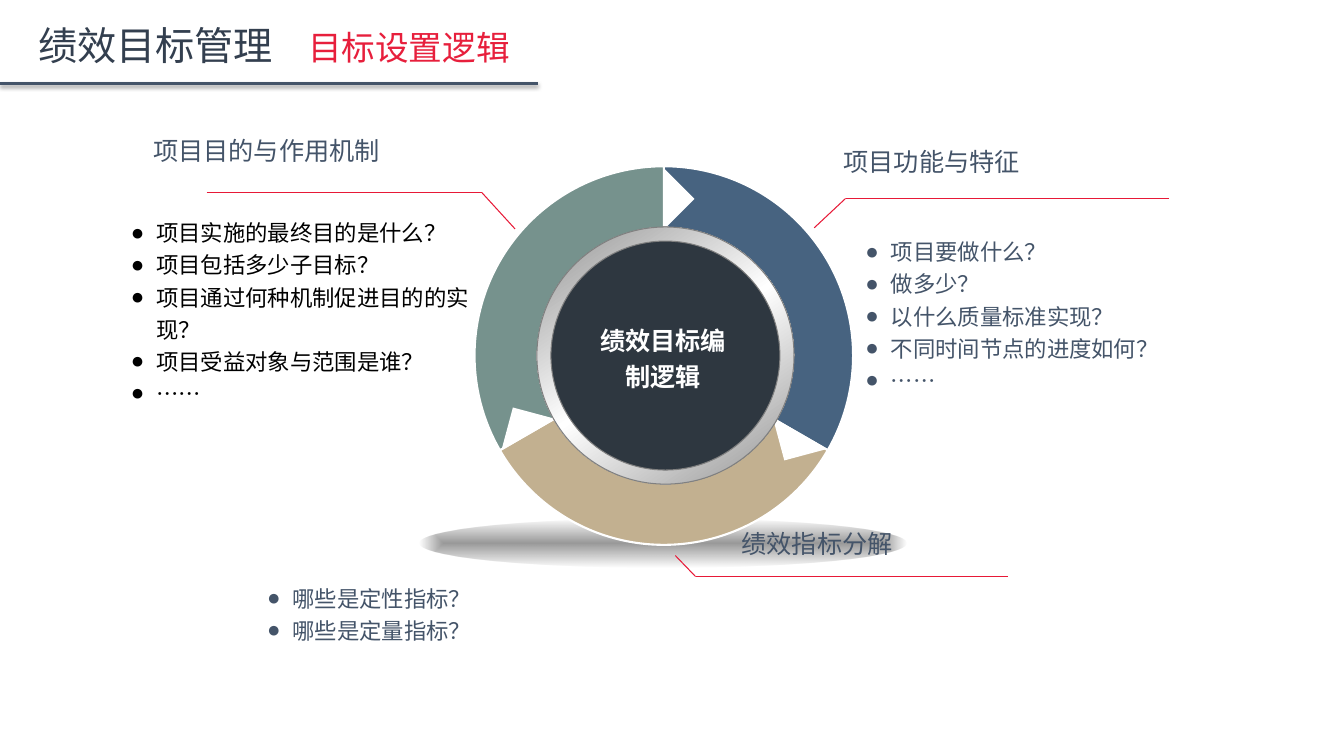
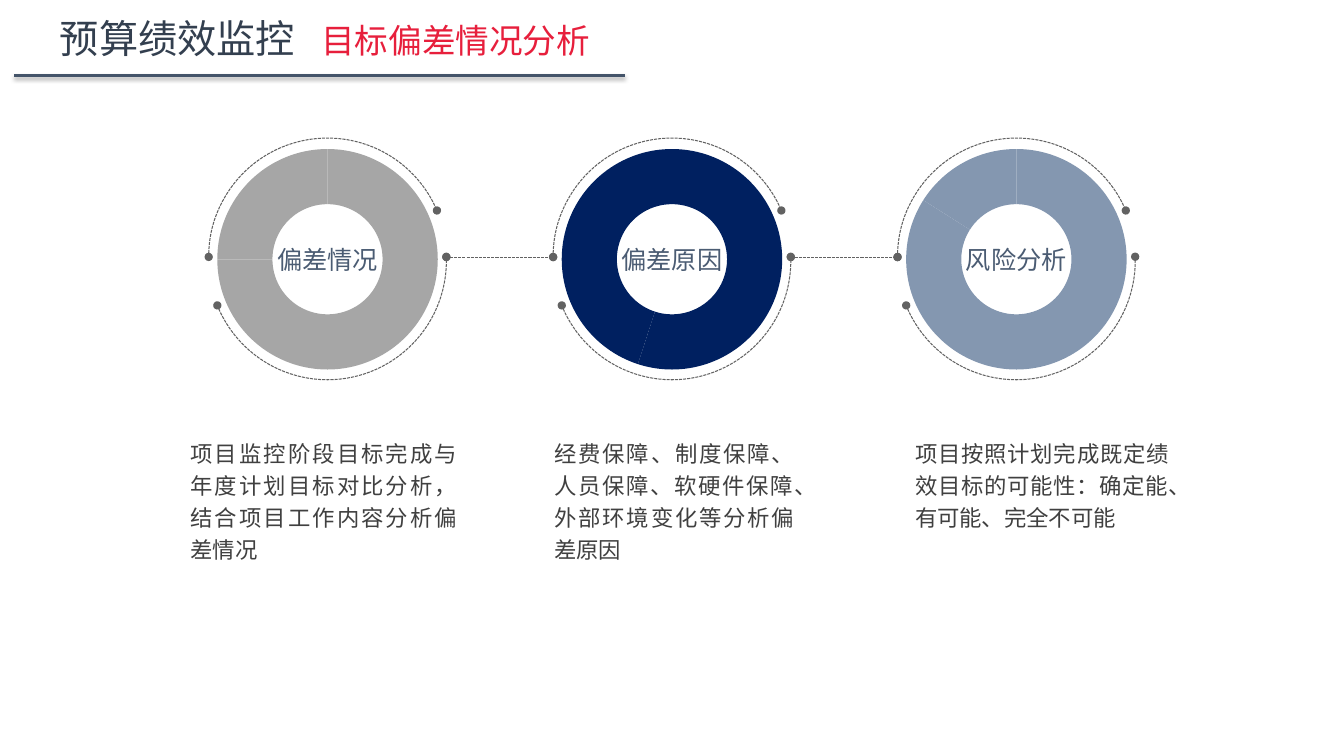
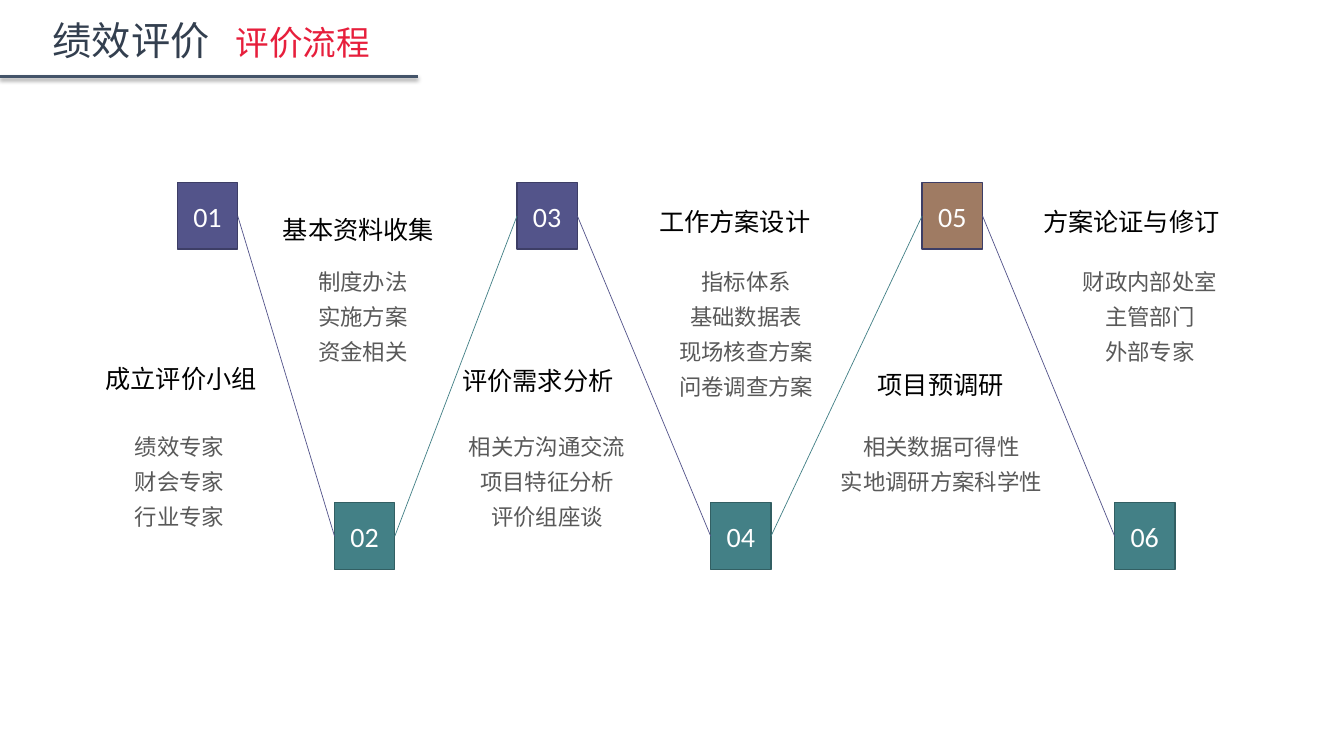
from dataclasses import dataclass
from itertools import pairwise
from math import cos, radians, sin

from lxml import etree
from pptx import Presentation
from pptx import util as u
from pptx.chart.data import CategoryChartData
from pptx.dml.color import RGBColor
from pptx.enum import chart as charts
from pptx.enum import dml, shapes, text
from pptx.oxml.ns import qn

Cm, Pt = u.Cm, u.Pt
SHAPE = shapes.MSO_SHAPE
ALIGN = text.PP_ALIGN
ANCHOR = text.MSO_ANCHOR


@dataclass(frozen=True)
class Theme:
    cjk: str = "Noto Sans CJK SC"
    latin: str = "Calibri"
    narrow: str = "Arial Narrow"
    chart: str = "Arial"
    title: str = "333F4F"
    accent: str = "E71F3C"
    leader: str = "E71937"
    slate: str = "445469"
    label: str = "4B5C73"
    black: str = "000000"
    white: str = "FFFFFF"
    caption: str = "404040"
    muted: str = "595959"
    dash: str = "626262"
    steel: str = "808080"
    hub: str = "2E3740"
    blue: str = "476380"
    tan: str = "C2B090"
    sage: str = "76928D"
    violet: str = "53548A"
    violet_edge: str = "3D3E66"
    teal: str = "438086"
    teal_edge: str = "325F63"
    brown: str = "9F7B63"
    silver: str = "A6A6A6"
    navy: str = "002060"
    mist: str = "8497B0"
    title_size: int = 28
    subtitle_size: int = 24
    number_size: int = 20
    heading_size: int = 18
    body_size: int = 16
    tight: float = 1.19
    loose: float = 1.43


T = Theme()


def rgb(value):
    return RGBColor.from_string(value)


def add(parent, tag, **attrs):
    return etree.SubElement(parent, qn(tag), {k: str(v) for k, v in attrs.items()})


def place(sp, box):
    sp.left, sp.top, sp.width, sp.height = (Cm(v) for v in box)


def paint(sp, fill=None, line=None, width=0.75):
    sp.shadow.inherit = False
    if fill:
        sp.fill.solid()
        sp.fill.fore_color.rgb = rgb(fill)
    else:
        sp.fill.background()
    if line:
        sp.line.color.rgb = rgb(line)
        sp.line.width = Pt(width)
    else:
        sp.line.fill.background()


def gradient(sp, stops):
    sp_pr = sp._element.spPr
    sp_pr.remove(sp_pr.find(qn("a:noFill")))
    fill = etree.Element(qn("a:gradFill"), rotWithShape="1")
    gs_list = add(fill, "a:gsLst")
    for pos, color, alpha in stops:
        clr = add(add(gs_list, "a:gs", pos=pos * 1000), "a:srgbClr", val=color)
        add(clr, "a:alpha", val=alpha * 1000)
    sp_pr.find(qn("a:prstGeom")).addnext(fill)
    return fill


def add_run(p, words, size, color, font=T.cjk, bold=False):
    r = p.add_run()
    r.text = words
    r.font.size, r.font.bold, r.font.name = Pt(size), bold, font
    r.font.color.rgb = rgb(color)
    r_pr = r._r.get_or_add_rPr()
    r_pr.set("lang", "zh-CN")
    add(r_pr, "a:ea", typeface=T.cjk)


def frame(sp, anchor=ANCHOR.TOP, inset=True, wrap=True):
    tf = sp.text_frame
    tf.word_wrap = wrap
    tf.auto_size = text.MSO_AUTO_SIZE.NONE
    tf.vertical_anchor = anchor
    tf.margin_left = tf.margin_right = Cm(0.25 if inset else 0)
    tf.margin_top = tf.margin_bottom = Cm(0.13 if inset else 0)
    return tf


def spacing(p, size, ratio, align, after=0):
    p.alignment = align
    p.line_spacing = Pt(round(size * ratio, 1))
    p.space_before, p.space_after = Pt(0), Pt(after)


def bullet(p, char):
    p_pr = p._p.get_or_add_pPr()
    p_pr.set("marL", str(Cm(0.64) if char else 0))
    p_pr.set("indent", str(-Cm(0.64) if char else 0))
    if char:
        add(p_pr, "a:buChar", char=char)
    else:
        add(p_pr, "a:buNone")


def add_list(slide, pool, box, lines, color, align=ALIGN.LEFT, char=None,
             ratio=T.loose, after=0, anchor=ANCHOR.TOP, inset=True):
    sp = next(pool, None) or slide.shapes.add_textbox(0, 0, 0, 0)
    place(sp, box)
    tf = frame(sp, anchor, inset)
    for i, words in enumerate(lines):
        p = tf.add_paragraph() if i else tf.paragraphs[0]
        spacing(p, T.body_size, ratio, align, after)
        bullet(p, char)
        add_run(p, words, T.body_size, color)


def add_text(slide, box, words, color, align=ALIGN.LEFT, ratio=T.tight,
             font=T.cjk, bold=False, anchor=ANCHOR.TOP, wrap=True):
    sp = slide.shapes.add_textbox(*(Cm(v) for v in box))
    p = frame(sp, anchor, wrap=wrap).paragraphs[0]
    spacing(p, T.heading_size, ratio, align)
    add_run(p, words, T.heading_size, color, font, bold)


def add_shape(slide, kind, box, *style):
    sp = slide.shapes.add_shape(kind, *(Cm(v) for v in box))
    paint(sp, *style)
    return sp


def centred(cx, cy, w, h=None):
    h = h or w
    return cx - w / 2, cy - h / 2, w, h


def add_line(slide, start, end, color, width):
    ln = slide.shapes.add_connector(shapes.MSO_CONNECTOR.STRAIGHT,
                                    *(Cm(v) for v in (*start, *end)))
    ln.line.color.rgb = rgb(color)
    ln.line.width = Pt(width)
    return ln, add(ln._element.spPr, "a:effectLst")


def dotted(sp):
    sp.line.dash_style = dml.MSO_LINE.SQUARE_DOT
    ln = sp.line._get_or_add_ln()
    add(ln, "a:headEnd", type="oval")
    add(ln, "a:tailEnd", type="oval")


def header(slide, left, top, name, topic, gap, rule):
    sp = slide.shapes.title
    place(sp, (left, top, 17, 1.3))
    p = frame(sp, inset=False).paragraphs[0]
    spacing(p, T.title_size, T.tight, ALIGN.LEFT)
    tabs = add(p._p.get_or_add_pPr(), "a:tabLst")
    add(tabs, "a:tab", pos=Pt(T.title_size * len(name)) + Cm(gap), algn="l")
    add_run(p, name + "\t", T.title_size, T.title)
    add_run(p, topic, T.subtitle_size, T.accent)
    start, end, y = rule
    _, effects = add_line(slide, (start, y), (end, y), T.slate, 2)
    shadow = add(effects, "a:outerShdw", blurRad=Pt(3.1), dist=Pt(1.6),
                 dir=5400000, algn="t", rotWithShape=0)
    add(add(shadow, "a:srgbClr", val=T.black), "a:alpha", val=38000)


def new_slide(prs, *head):
    slide = prs.slides.add_slide(prs.slide_layouts.get_by_name("Comparison"))
    pool = iter([s for s in slide.placeholders if s.placeholder_format.idx])
    header(slide, *head)
    return slide, pool


def drop_unused(pool):
    for sp in pool:
        sp._element.getparent().remove(sp._element)


def set_angles(sp, start, end):
    sp.adjustments[0], sp.adjustments[1] = start * 0.6, end * 0.6


def wheel(slide, left, top, size):
    cx, cy = left + size / 2, top + size / 2
    ground = add_shape(slide, SHAPE.OVAL, centred(cx - 0.02, top + size - 0.05, 12.29, 1.22))
    fill = gradient(ground, [(0, T.black, 40), (100, T.black, 0)])
    add(add(fill, "a:path", path="shape"), "a:fillToRect", l=50000, t=50000, r=50000, b=50000)
    angles = (270, 30, 150)
    for start, color in zip(angles, (T.blue, T.tan, T.sage)):
        sector = add_shape(slide, SHAPE.PIE, (left, top, size, size), color, T.white, 1.5)
        set_angles(sector, start, (start + 120) % 360)
    for angle in angles:
        a = radians(angle)
        notch = add_shape(slide, SHAPE.RIGHT_TRIANGLE,
                          centred(cx + 3.95 * cos(a), cy + 3.95 * sin(a), 1.09), T.white)
        notch.rotation = (angle - 45) % 360
    rim = add_shape(slide, SHAPE.OVAL, centred(cx + 0.04, cy, 6.48), None, T.steel)
    rim.rotation = 10.8
    fill = gradient(rim, [(0, T.steel, 100), (50, T.white, 100), (100, T.steel, 100)])
    add(fill, "a:lin", ang=2700000, scaled=1)
    add_shape(slide, SHAPE.OVAL, centred(cx + 0.04, cy, 5.77), T.hub, T.steel)
    add_text(slide, centred(cx - 0.02, cy, 4.01, 1.19), "绩效目标编制逻辑", T.white,
             ALIGN.CENTER, T.loose, bold=True, anchor=ANCHOR.MIDDLE)


def callout(slide, heading, at, points):
    for start, end in pairwise(points):
        add_line(slide, start, end, T.leader, 0.75)
    add_text(slide, (*at, 8.36, 1.02), heading, T.slate)


def goals_slide(prs):
    slide, pool = new_slide(prs, 0.96, 0.56, "绩效目标管理", "目标设置逻辑", 0.88,
                            (0, 13.56, 2.11))
    wheel(slide, 11.96, 4.19, 9.54)
    for heading, at, points, box, color, lines in (
        ("项目目的与作用机制", (3.61, 3.28), ((5.21, 4.85), (12.14, 4.85), (12.98, 5.77)),
         (3.05, 6.25, 9.4, 3.15), T.black,
         ("项目实施的最终目的是什么？", "项目包括多少子目标？",
          "项目通过何种机制促进目的的实现？", "项目受益对象与范围是谁？", "……")),
        ("项目功能与特征", (21.01, 3.56), ((29.46, 5), (21.31, 5), (20.52, 5.74)),
         (21.56, 6.53, 9.68, 2.74), T.slate,
         ("项目要做什么？", "做多少？", "以什么质量标准实现？",
          "不同时间节点的进度如何？", "……")),
        ("绩效指标分解", (18.44, 13.18), ((25.4, 14.53), (17.53, 14.53), (17.02, 14)),
         (6.48, 14.52, 15.72, 1.78), T.slate,
         ("哪些是定性指标？", "哪些是定量指标？")),
    ):
        callout(slide, heading, at, points)
        add_list(slide, pool, box, lines, color, char="●", anchor=ANCHOR.MIDDLE)
    drop_unused(pool)


def doughnut(slide, box, share, color):
    data = CategoryChartData()
    data.categories = ["1", "2"]
    data.add_series("Series 1", (share, 100 - share))
    chart = slide.shapes.add_chart(charts.XL_CHART_TYPE.DOUGHNUT,
                                   *(Cm(v) for v in box), data).chart
    chart.has_legend = chart.has_title = False
    chart.font.size, chart.font.name = Pt(10), T.chart
    chart.font.color.rgb = rgb(T.slate)
    plot = chart.plots[0]
    plot.vary_by_categories = False
    for i in range(2):
        fill = plot.series[0].points[i].format.fill
        fill.solid()
        fill.fore_color.rgb = rgb(color)
    area = chart._chartSpace.chart.plotArea
    area.find(".//" + qn("c:holeSize")).set("val", "70")
    for old in area.findall(qn("c:layout")):
        area.remove(old)
    layout = etree.Element(qn("c:layout"))
    area.insert(0, layout)
    manual = add(layout, "c:manualLayout")
    w, h = 0.59, 0.89
    for tag, val in (("layoutTarget", "inner"), ("xMode", "edge"), ("yMode", "edge"),
                     ("x", (1 - w) / 2), ("y", (1 - h) / 2), ("w", w), ("h", h)):
        add(manual, "c:" + tag, val=val)


def dial(slide, left, top, size, label, share, color):
    cx, cy = left + size / 2, top + size / 2
    doughnut(slide, centred(cx, cy + 0.06, 9.42, 6.27), share, color)
    for drop, start, end in ((0, 180, 337), (0.1, 358, 158)):
        arc = add_shape(slide, SHAPE.ARC, (left, top + drop, size, size), None, T.dash)
        set_angles(arc, start, end)
        dotted(arc)
    add_text(slide, centred(cx, cy - 0.06, 3.07, 1.09), label, T.label, ALIGN.CENTER,
             T.loose, T.narrow, wrap=False)


def deviation_slide(prs):
    slide, pool = new_slide(prs, 1.51, 0.36, "预算绩效监控", "目标偏差情况分析", 0.66,
                            (0.36, 15.75, 1.91))
    left, top, size, pitch = 5.26, 3.48, 5.99, 8.68
    for i, (label, share, color, x, width, words) in enumerate((
        ("偏差情况", 75, T.silver, 4.8, 6.73,
         "项目监控阶段目标完成与年度计划目标对比分析，结合项目工作内容分析偏差情况"),
        ("偏差原因", 55, T.navy, 13.97, 6.05,
         "经费保障、制度保障、人员保障、软硬件保障、外部环境变化等分析偏差原因"),
        ("风险分析", 84, T.mist, 23.06, 6.4,
         "项目按照计划完成既定绩效目标的可能性：确定能、有可能、完全不可能"),
    )):
        dial(slide, left + i * pitch, top, size, label, share, color)
        add_list(slide, pool, (x, 10.95, width, 3.2), [words], T.caption,
                 ALIGN.JUSTIFY, inset=False)
    for i in range(2):
        start = left + i * pitch + size
        ln, _ = add_line(slide, (start, 6.48), (left + (i + 1) * pitch, 6.48), T.dash, 0.75)
        dotted(ln)
    drop_unused(pool)


def step(slide, number, box, fill, edge):
    sp = add_shape(slide, SHAPE.RECTANGLE, box, fill, edge, 1)
    p = frame(sp, ANCHOR.MIDDLE).paragraphs[0]
    p.alignment = ALIGN.CENTER
    add_run(p, f"{number:02d}", T.number_size, T.white, T.latin)


def process_slide(prs):
    slide, pool = new_slide(prs, 1.33, 0.41, "绩效评价", "评价流程", 0.66,
                            (0, 10.54, 1.93))
    w, h = 1.52, 1.68
    upper, lower = 4.6, 12.67
    left, center = ALIGN.LEFT, ALIGN.CENTER
    steps = (
        (4.47, T.violet, "成立评价小组", (2.41, 9.04), (3.15, 3.51), left,
         ("绩效专家", "财会专家", "行业专家")),
        (8.43, T.teal, "基本资料收集", (6.88, 5.28), (7.77, 3.18), left,
         ("制度办法", "实施方案", "资金相关")),
        (13.03, T.violet, "评价需求分析", (11.4, 9.09), (11.02, 5.54), center,
         ("相关方沟通交流", "项目特征分析", "评价组座谈")),
        (17.91, T.teal, "工作方案设计", (16.36, 5.08), (16.43, 4.75), center,
         ("指标体系", "基础数据表", "现场核查方案", "问卷调查方案")),
        (23.24, T.brown, "项目预调研", (21.87, 9.19), (20.73, 5.99), center,
         ("相关数据可得性", "实地调研方案科学性")),
        (28.09, T.teal, "方案论证与修订", (26.04, 5.08), (26.72, 4.52), center,
         ("财政内部处室", "主管部门", "外部专家")),
    )
    ends = []
    for i, (x, fill, heading, at, (list_x, list_w), align, lines) in enumerate(steps):
        y, list_y, edge = ((lower, 6.63, T.teal_edge) if i % 2
                           else (upper, 10.8, T.violet_edge))
        step(slide, i + 1, (x, y, w, h), fill, edge)
        add_text(slide, (*at, 5.87, 1.02), heading, T.black)
        add_list(slide, pool, (list_x, list_y, list_w, 0.25 + 0.89 * len(lines)), lines,
                 T.muted, align, ratio=T.tight, after=6)
        ends.append((x, y + h / 2))
    for i, ((x1, y1), end) in enumerate(pairwise(ends)):
        add_line(slide, (x1 + w, y1), end, T.teal if i % 2 else T.violet, 0.5)
    drop_unused(pool)


def main():
    prs = Presentation()
    prs.slide_width, prs.slide_height = Cm(33.87), Cm(19.05)
    goals_slide(prs)
    deviation_slide(prs)
    process_slide(prs)
    prs.save("out.pptx")


if __name__ == "__main__":
    main()
